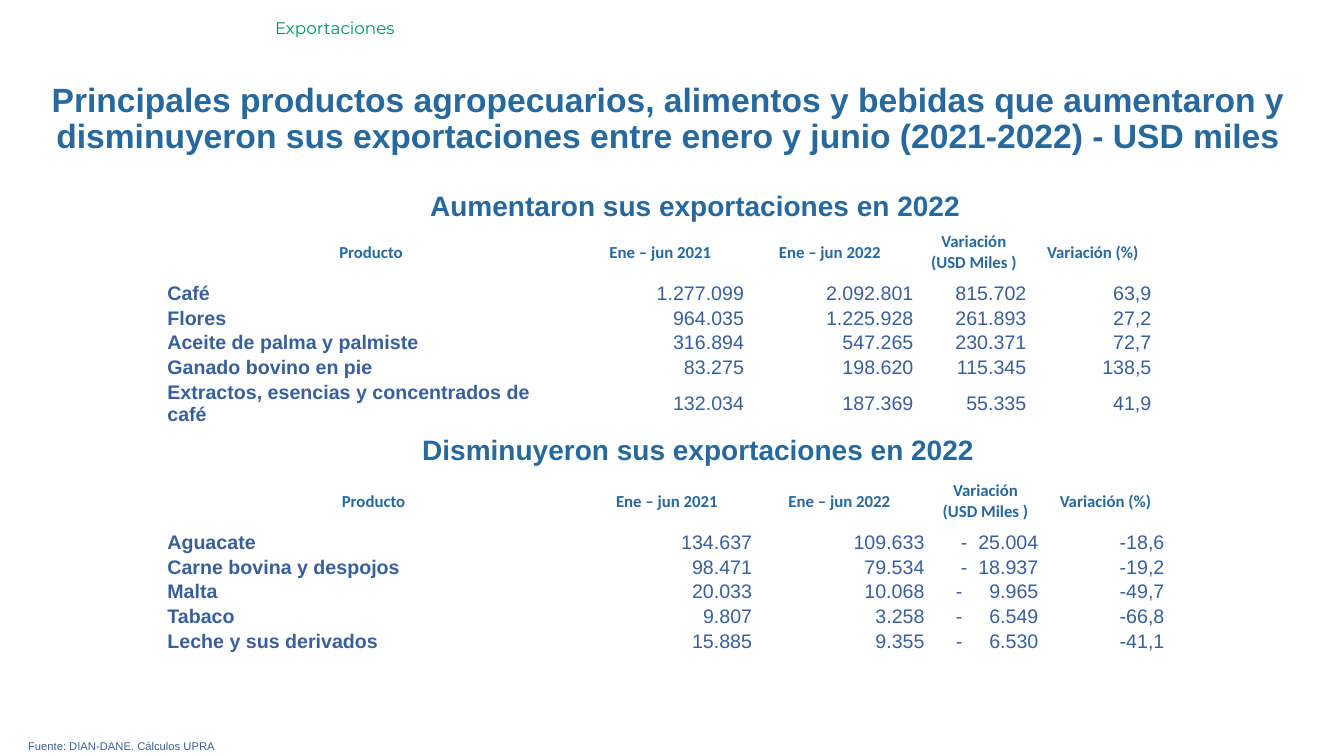
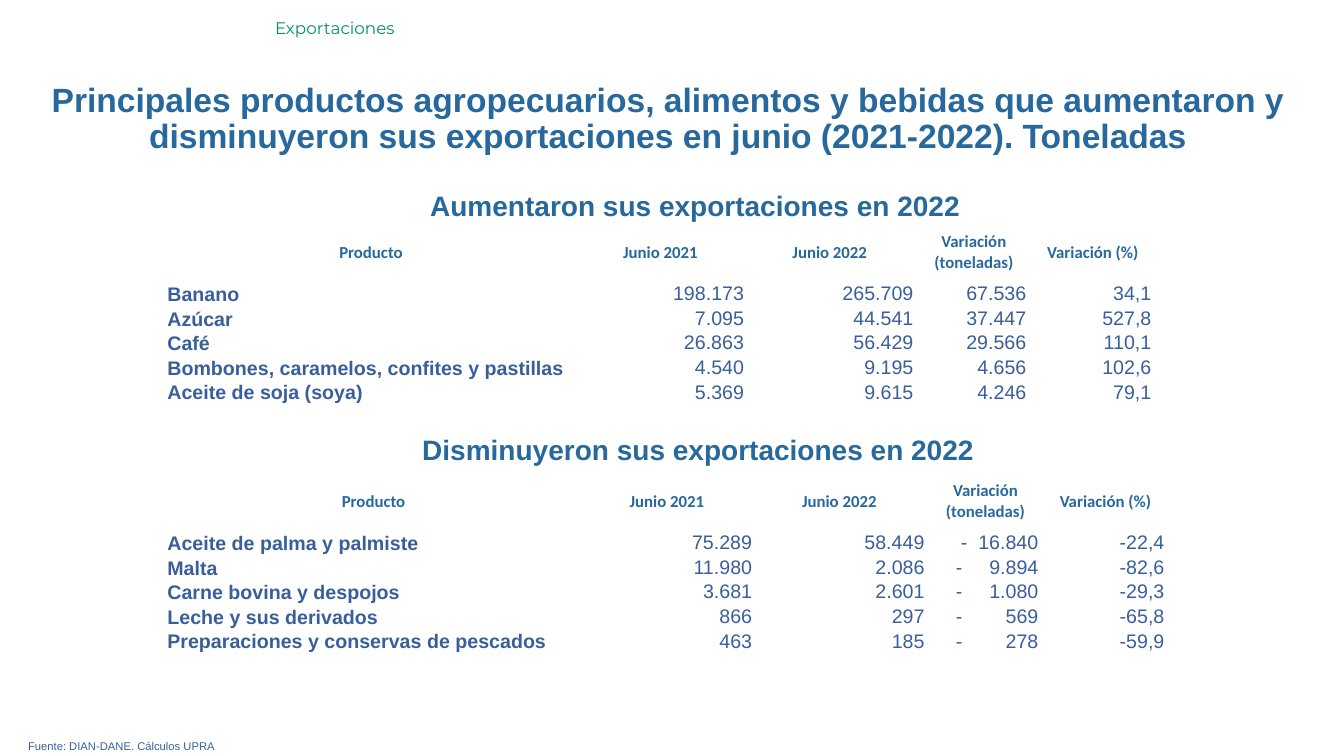
from lxml.etree import SubElement
from pptx import Presentation
from pptx.dml.color import RGBColor
from pptx.enum.text import MSO_ANCHOR as Anchor, MSO_AUTO_SIZE as AutoSize, PP_ALIGN as Align
from pptx.oxml.ns import qn
from pptx.util import Inches, Pt

GREEN = RGBColor(0x00, 0x92, 0x67)
TITLE_BLUE = RGBColor(0x27, 0x68, 0x9D)
TEXT_BLUE = RGBColor(0x39, 0x5F, 0x9B)

HEADER_HEIGHT = 0.58
ROW_HEIGHT = 0.24
CELL_MARGIN = 0.01
CHANGE_MARGIN = 0.07
CHANGE_COLUMN = 3
TITLE_START = "Principales productos agropecuarios, alimentos y bebidas que aumentaron y disminuyeron sus exportaciones "

INCREASE = {
    "heading": "Aumentaron sus exportaciones en 2022",
    "heading_box": (2.14, 1.82, 9.51, 0.44),
    "table_at": (1.65, 2.21),
    "widths": (4.06, 1.68, 1.68, 1.18, 1.18),
}
DECREASE = {
    "heading": "Disminuyeron sus exportaciones en 2022",
    "heading_box": (1.78, 4.24, 10.29, 0.44),
    "table_at": (1.65, 4.68),
    "widths": (4.11, 1.71, 1.71, 1.19, 1.19),
}

SLIDES = [
    {
        "title": TITLE_START + "entre enero y junio (2021-2022) - USD miles",
        "periods": ("Ene – jun 2021", "Ene – jun 2022"),
        "unit": "(USD Miles )",
        "product_anchor": Anchor.MIDDLE,
        "increases": [
            ("Café", "1.277.099", "2.092.801", "815.702", "63,9"),
            ("Flores", "964.035", "1.225.928", "261.893", "27,2"),
            ("Aceite de palma y palmiste", "316.894", "547.265", "230.371", "72,7"),
            ("Ganado bovino en pie", "83.275", "198.620", "115.345", "138,5"),
            ("Extractos, esencias y concentrados de café", "132.034", "187.369", "55.335", "41,9"),
        ],
        "decreases": [
            ("Aguacate", "134.637", "109.633", "-25.004", "-18,6"),
            ("Carne bovina y despojos", "98.471", "79.534", "-18.937", "-19,2"),
            ("Malta", "20.033", "10.068", "-9.965", "-49,7"),
            ("Tabaco", "9.807", "3.258", "-6.549", "-66,8"),
            ("Leche y sus derivados", "15.885", "9.355", "-6.530", "-41,1"),
        ],
    },
    {
        "title": TITLE_START + "en junio (2021-2022). Toneladas",
        "periods": ("Junio 2021", "Junio 2022"),
        "unit": "(toneladas)",
        "product_anchor": Anchor.BOTTOM,
        "increases": [
            ("Banano", "198.173", "265.709", "67.536", "34,1"),
            ("Azúcar", "7.095", "44.541", "37.447", "527,8"),
            ("Café", "26.863", "56.429", "29.566", "110,1"),
            ("Bombones, caramelos, confites y pastillas", "4.540", "9.195", "4.656", "102,6"),
            ("Aceite de soja (soya)", "5.369", "9.615", "4.246", "79,1"),
        ],
        "decreases": [
            ("Aceite de palma y palmiste", "75.289", "58.449", "-16.840", "-22,4"),
            ("Malta", "11.980", "2.086", "-9.894", "-82,6"),
            ("Carne bovina y despojos", "3.681", "2.601", "-1.080", "-29,3"),
            ("Leche y sus derivados", "866", "297", "-569", "-65,8"),
            ("Preparaciones y conservas de pescados", "463", "185", "-278", "-59,9"),
        ],
    },
]


def write_text(frame, text, size=14, font="Arial", color=TEXT_BLUE, bold=False,
               align=Align.LEFT, spacing=None, tab=None):
    """Write one formatted paragraph, with an optional right tab stop in inches."""
    paragraph = frame.paragraphs[0]
    paragraph.text = text
    paragraph.alignment = align
    if spacing:
        paragraph.line_spacing = spacing
    if tab:
        stops = SubElement(paragraph._p.get_or_add_pPr(), qn("a:tabLst"))
        SubElement(stops, qn("a:tab"), pos=str(Inches(tab)), algn="r")
    for run in paragraph.runs:
        run.font.size = Pt(size)
        run.font.name = font
        run.font.bold = bold
        run.font.color.rgb = color


def add_text(slide, box, text, **text_format):
    """Add a wrapping text box that fits its text."""
    frame = slide.shapes.add_textbox(*map(Inches, box)).text_frame
    frame.word_wrap = True
    frame.auto_size = AutoSize.SHAPE_TO_FIT_TEXT
    write_text(frame, text, **text_format)


def fill_title(slide, text):
    """Place and format the title placeholder."""
    title = slide.shapes.title
    title.left, title.top, title.width, title.height = map(Inches, (0, 0.53, 13.25, 1.32))
    title.text_frame.word_wrap = True
    title.text_frame.auto_size = AutoSize.NONE
    title.text_frame.vertical_anchor = Anchor.MIDDLE
    write_text(title.text_frame, text, size=24, color=TITLE_BLUE, bold=True,
               align=Align.CENTER, spacing=0.9)


def format_cell(cell, anchor=Anchor.MIDDLE):
    """Clear the fill of a cell and set its margins and anchor."""
    cell.fill.background()
    cell.margin_left = cell.margin_right = cell.margin_top = Inches(CELL_MARGIN)
    cell.margin_bottom = 0
    cell.vertical_anchor = anchor


def write_change(cell, text, width):
    """Write an absolute change, with the minus sign set apart from the number."""
    if text.startswith("-"):
        number = text[1:]
        indent = 0.35 if len(number) > 5 else 0.3
        cell.margin_left = Inches(indent)
        write_text(cell.text_frame, f"-\t{number}", tab=width - CHANGE_MARGIN - indent)
    else:
        cell.margin_right = Inches(CHANGE_MARGIN)
        write_text(cell.text_frame, text, align=Align.RIGHT)


def add_export_table(slide, position, widths, header, rows, product_anchor):
    """Add a table of products, values and changes at a position."""
    height = HEADER_HEIGHT + ROW_HEIGHT * len(rows)
    box = (*position, sum(widths), height)
    table = slide.shapes.add_table(len(rows) + 1, len(widths), *map(Inches, box)).table
    table.horz_banding = False
    for column, width in zip(table.columns, widths):
        column.width = Inches(width)
    for index, row in enumerate(table.rows):
        row.height = Inches(ROW_HEIGHT if index else HEADER_HEIGHT)
    for index, text in enumerate(header):
        cell = table.cell(0, index)
        format_cell(cell)
        write_text(cell.text_frame, text, size=12, font="Calibri", color=TITLE_BLUE,
                   bold=True, align=Align.CENTER)
    for row_index, row in enumerate(rows, start=1):
        for index, text in enumerate(row):
            cell = table.cell(row_index, index)
            format_cell(cell, Anchor.MIDDLE if index else product_anchor)
            if index == CHANGE_COLUMN:
                write_change(cell, text, widths[index])
            else:
                write_text(cell.text_frame, text, bold=index == 0,
                           align=Align.RIGHT if index else Align.LEFT)


def add_section(slide, section, header, rows, product_anchor):
    """Add a section heading and its table."""
    add_text(slide, section["heading_box"], section["heading"], size=20,
             color=TITLE_BLUE, bold=True, align=Align.CENTER)
    add_export_table(slide, section["table_at"], section["widths"], header, rows, product_anchor)


def add_export_slide(presentation, content):
    """Add one slide that compares rising and falling exports."""
    slide = presentation.slides.add_slide(presentation.slide_layouts[5])
    add_text(slide, (2.63, 0.13, 10.7, 0.3), "Exportaciones", size=12,
             font="Montserrat", color=GREEN)
    fill_title(slide, content["title"])
    header = ("Producto", *content["periods"], f"Variación\v{content['unit']}", "Variación (%)")
    for section, key in ((INCREASE, "increases"), (DECREASE, "decreases")):
        add_section(slide, section, header, content[key], content["product_anchor"])
    add_text(slide, (0.18, 7.29, 12.91, 0.24), "Fuente: DIAN-DANE. Cálculos UPRA",
             size=8, align=Align.JUSTIFY)


def main():
    """Build and save the presentation."""
    presentation = Presentation()
    presentation.slide_width = Inches(13.33)
    presentation.slide_height = Inches(7.5)
    for content in SLIDES:
        add_export_slide(presentation, content)
    presentation.save("out.pptx")


if __name__ == "__main__":
    main()
